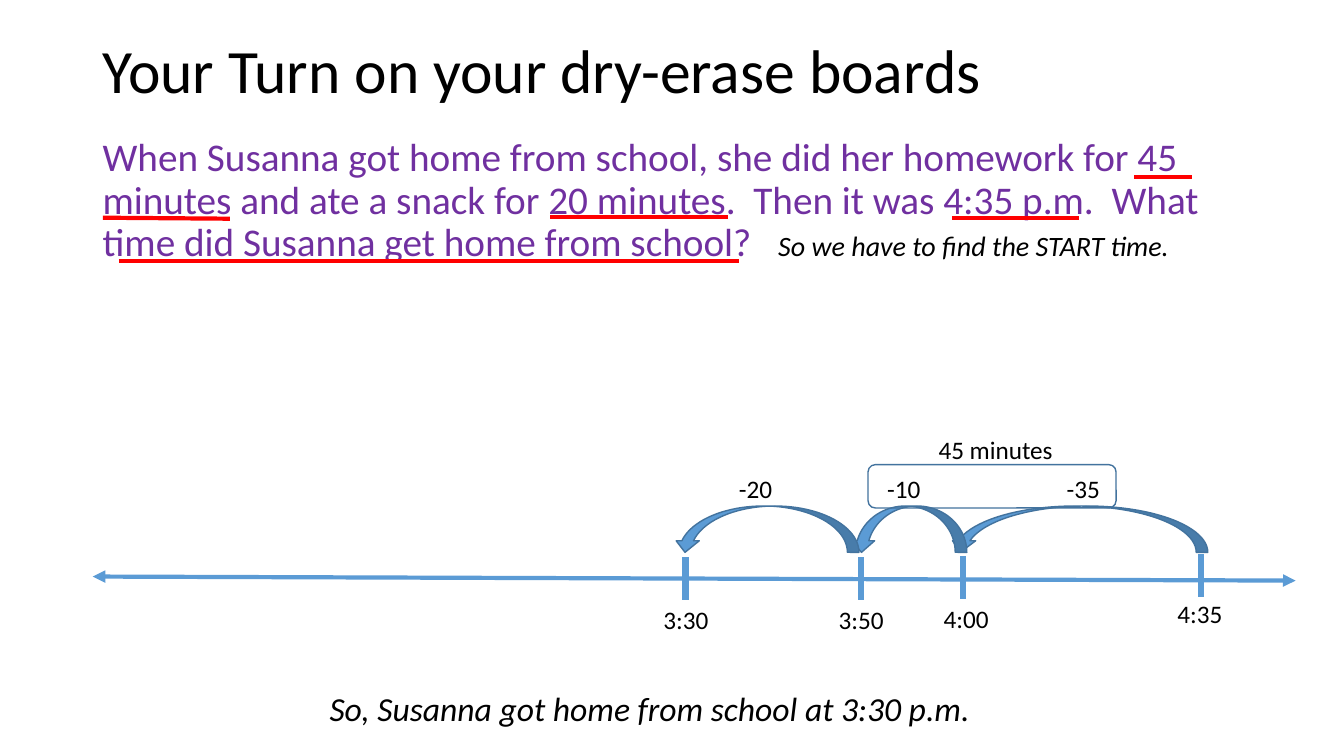
from pptx import Presentation
from pptx.dml.color import RGBColor
from pptx.enum.shapes import MSO_CONNECTOR, MSO_SHAPE
from pptx.enum.text import MSO_ANCHOR
from pptx.oxml.ns import qn
from pptx.util import Inches, Pt
from lxml.etree import SubElement

COLORS = {"text": "000000", "problem": "7030A0", "underline": "FF0000",
          "timeline": "5B9BD5", "outline": "43739E"}
FONT = "Calibri"

TITLE = "Your Turn on your dry-erase boards"
PROBLEM = ("When Susanna got home from school, she did her homework for 45 minutes "
           "and ate a snack for 20 minutes.  Then it was 4:35 p.m.  "
           "What time did Susanna get home from school?")
HINT = "So we have to find the START time."
ANSWER = "So, Susanna got home from school at 3:30 p.m."
BRACKET_LABEL = "45 minutes"

UNDERLINES = [
    (1.18, 2.59, 7.33, 2.59),
    (11.25, 1.76, 11.82, 1.76),
    (1.02, 2.16, 2.28, 2.17),
    (9.44, 2.16, 10.7, 2.16),
    (5.46, 2.15, 7.22, 2.15),
]
TIMELINE = (0.92, 5.72, 12.85, 5.76)
TICKS = [
    ("4:35", 11.91, 5.5, 11.58, 5.89),
    ("4:00", 9.55, 5.52, 9.26, 5.94),
    ("3:50", 8.54, 5.53, 8.22, 5.95),
    ("3:30", 6.8, 5.53, 6.48, 5.95),
]
JUMPS = [
    ("-35", 9.41, 2.57, 10.48),
    ("-10", 8.43, 1.16, 8.7),
    ("-20", 6.68, 1.84, 7.23),
]
TICK_HEIGHT = 0.42
JUMP_TOP, JUMP_HEIGHT, JUMP_LABEL_TOP = 5.02, 0.46, 4.65
LABEL_WIDTH, LABEL_HEIGHT = 0.89, 0.41

prs = Presentation()
prs.slide_width, prs.slide_height = Inches(13.33), Inches(7.5)
slide = prs.slides.add_slide(prs.slide_layouts[6])


def rgb(name):
    return RGBColor.from_string(COLORS[name])


def add_text(text, left, top, width, height, size, color="text", italic=False,
             anchor=MSO_ANCHOR.TOP, line_spacing=None, space_before=0):
    frame = slide.shapes.add_textbox(*map(Inches, (left, top, width, height))).text_frame
    frame.word_wrap = True
    frame.vertical_anchor = anchor
    paragraph = frame.paragraphs[0]
    paragraph.text = text
    paragraph.line_spacing = line_spacing
    paragraph.space_before = Pt(space_before)
    font = paragraph.font
    font.name, font.size, font.italic = FONT, Pt(size), italic
    font.color.rgb = rgb(color)


def add_line(ends, color, width, arrows=False):
    line = slide.shapes.add_connector(MSO_CONNECTOR.STRAIGHT, *map(Inches, ends))
    line.line.color.rgb = rgb(color)
    line.line.width = Pt(width)
    if arrows:
        for end in ("a:headEnd", "a:tailEnd"):
            SubElement(line.line._get_or_add_ln(), qn(end), type="triangle")
    SubElement(line._element.spPr, qn("a:effectLst"))


def add_outlined(preset, left, top, width, height):
    shape = slide.shapes.add_shape(preset, *map(Inches, (left, top, width, height)))
    shape.shadow.inherit = False
    shape.line.color.rgb = rgb("outline")
    shape.line.width = Pt(1)
    return shape


add_text(TITLE, 0.92, 0, 11.5, 1.45, 44, anchor=MSO_ANCHOR.MIDDLE, line_spacing=0.9)
add_text(PROBLEM, 0.92, 1.32, 11.5, 5.43, 28, "problem", line_spacing=0.9, space_before=10)
add_text(HINT, 7.62, 2.22, 4.29, 0.44, 20, italic=True)

for underline in UNDERLINES:
    add_line(underline, "underline", 3)

add_line(TIMELINE, "timeline", 3, arrows=True)
for time, x, top, label_left, label_top in TICKS:
    add_line((x, top, x, top + TICK_HEIGHT), "timeline", 4.5)
    add_text(time, label_left, label_top, LABEL_WIDTH, LABEL_HEIGHT, 18)

for minutes, left, width, label_left in JUMPS:
    jump = add_outlined(MSO_SHAPE.CURVED_DOWN_ARROW, left, JUMP_TOP, width, JUMP_HEIGHT)
    jump.fill.solid()
    jump.fill.fore_color.rgb = rgb("timeline")
    jump._element.spPr.find(qn("a:xfrm")).set("flipH", "1")
    add_text(minutes, label_left, JUMP_LABEL_TOP, LABEL_WIDTH, LABEL_HEIGHT, 18)

bracket = add_outlined(MSO_SHAPE.ROUNDED_RECTANGLE, 8.61, 4.61, 2.46, 0.43)
bracket.fill.background()
add_text(BRACKET_LABEL, 9.21, 4.26, 1.42, 0.4, 18)

add_text(ANSWER, 3.17, 6.78, 8.53, 0.5, 24, italic=True)

prs.save("out.pptx")
